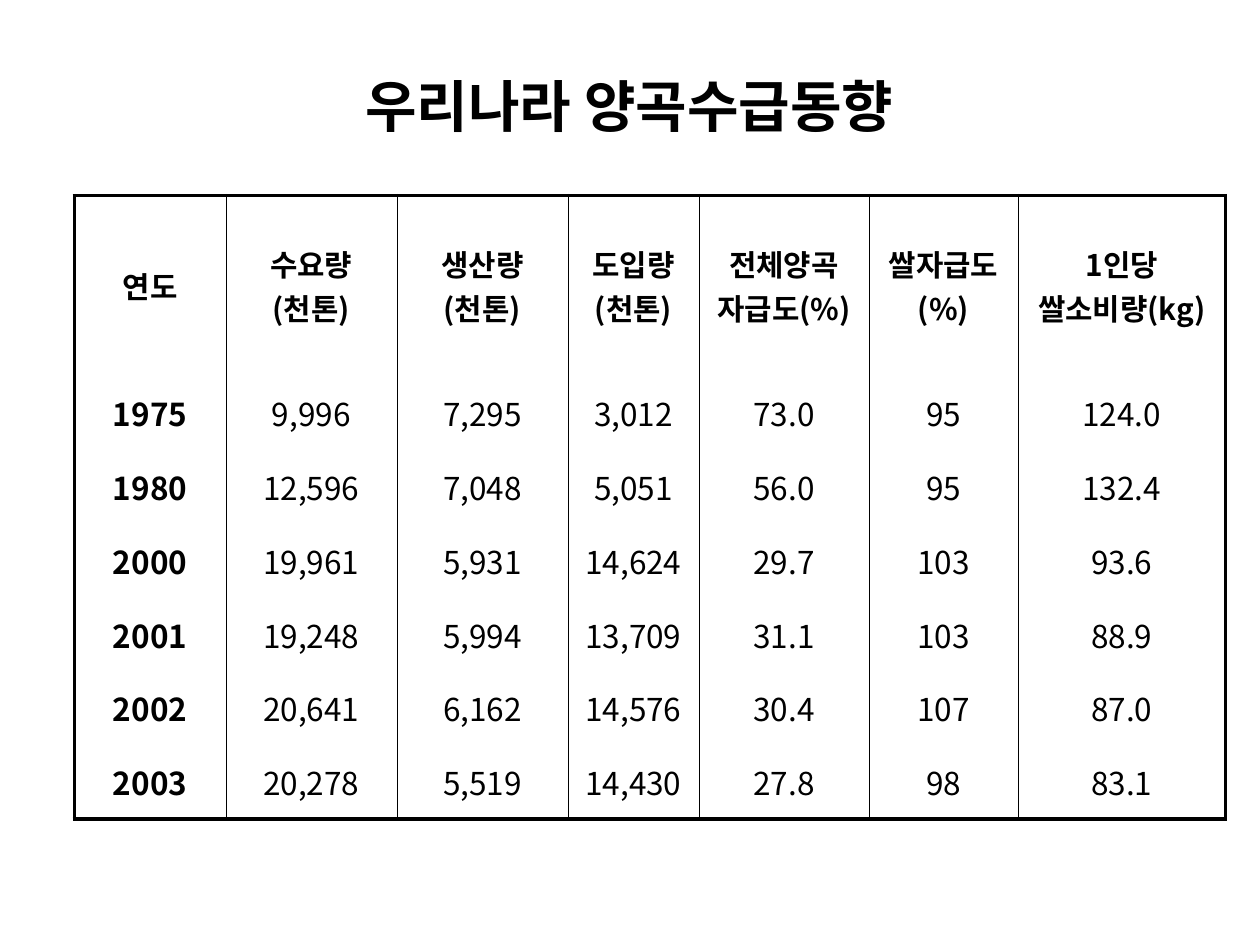
from lxml.etree import SubElement
from pptx import Presentation
from pptx.dml.color import RGBColor
from pptx.enum.text import MSO_ANCHOR, MSO_AUTO_SIZE, PP_ALIGN
from pptx.oxml.ns import qn
from pptx.util import Cm, Pt

FONT = "Noto Sans CJK KR"
BLACK = "000000"
THIN, THICK = 0.25, 2.25

COLUMN_WIDTHS = [3.05, 3.45, 3.45, 2.64, 3.43, 3.0, 4.19]
HEADER_HEIGHT, ROW_HEIGHT = 3.63, 1.49

ROWS = [
    ["연도", "수요량\n(천톤)", "생산량\n(천톤)", "도입량\n(천톤)",
     "전체양곡\n자급도(%)", "쌀자급도\n(%)", "1인당\n쌀소비량(kg)"],
    ["1975", "9,996", "7,295", "3,012", "73.0", "95", "124.0"],
    ["1980", "12,596", "7,048", "5,051", "56.0", "95", "132.4"],
    ["2000", "19,961", "5,931", "14,624", "29.7", "103", "93.6"],
    ["2001", "19,248", "5,994", "13,709", "31.1", "103", "88.9"],
    ["2002", "20,641", "6,162", "14,576", "30.4", "107", "87.0"],
    ["2003", "20,278", "5,519", "14,430", "27.8", "98", "83.1"],
]


def rgb(color):
    return RGBColor.from_string(color)


def add_run(p, text, size, bold):
    r = p.add_run()
    r.text = text
    r.font.size = Pt(size)
    r.font.bold = bold
    r.font.name = FONT
    r.font.color.rgb = rgb(BLACK)
    # East Asian typeface for the Korean letters
    SubElement(r.font._element, qn("a:ea")).set("typeface", FONT)


def set_border(cell, side, width):
    """Draw one side of a cell; a width of 0 hides it."""
    ln = SubElement(cell._tc.get_or_add_tcPr(), qn("a:ln" + side))
    ln.set("w", str(Pt(width)))
    if width:
        fill = SubElement(ln, qn("a:solidFill"))
        SubElement(fill, qn("a:srgbClr")).set("val", BLACK)
    else:
        SubElement(ln, qn("a:noFill"))


def add_title(s, text):
    sp = s.shapes.title
    sp.left, sp.top, sp.width, sp.height = Cm(7.11), Cm(1.32), Cm(11.94), Cm(1.6)
    tf = sp.text_frame
    tf.word_wrap = False
    tf.auto_size = MSO_AUTO_SIZE.NONE
    tf.vertical_anchor = MSO_ANCHOR.MIDDLE
    p = tf.paragraphs[0]
    p.alignment = PP_ALIGN.LEFT
    add_run(p, text, 32, True)


def fill_cell(cell, text, size, bold):
    cell.vertical_anchor = MSO_ANCHOR.MIDDLE
    tf = cell.text_frame
    for i, line in enumerate(text.split("\n")):
        p = tf.add_paragraph() if i else tf.paragraphs[0]
        p.alignment = PP_ALIGN.CENTER
        add_run(p, line, size, bold)


def add_grain_table(s):
    last_row, last_col = len(ROWS) - 1, len(COLUMN_WIDTHS) - 1
    heights = [HEADER_HEIGHT] + [ROW_HEIGHT] * last_row
    table = s.shapes.add_table(
        len(ROWS), len(COLUMN_WIDTHS), Cm(1.5), Cm(3.94),
        Cm(sum(COLUMN_WIDTHS)), Cm(sum(heights))).table
    table.first_row = table.horz_banding = False
    for column, width in zip(table.columns, COLUMN_WIDTHS):
        column.width = Cm(width)
    for row, height in zip(table.rows, heights):
        row.height = Cm(height)

    for i, values in enumerate(ROWS):
        for j, text in enumerate(values):
            cell = table.cell(i, j)
            fill_cell(cell, text, 18 if i else 17, i == 0 or j == 0)
            # Thick frame, thin column rules, no row rules
            set_border(cell, "L", THIN if j else THICK)
            set_border(cell, "R", THICK if j == last_col else THIN)
            set_border(cell, "T", 0 if i else THICK)
            set_border(cell, "B", THICK if i == last_row else 0)
            cell.fill.background()


def main():
    prs = Presentation()
    prs.slide_width, prs.slide_height = Cm(25.4), Cm(19.05)
    s = prs.slides.add_slide(prs.slide_layouts[5])
    add_grain_table(s)
    add_title(s, "우리나라 양곡수급동향")
    prs.save("out.pptx")


if __name__ == "__main__":
    main()
